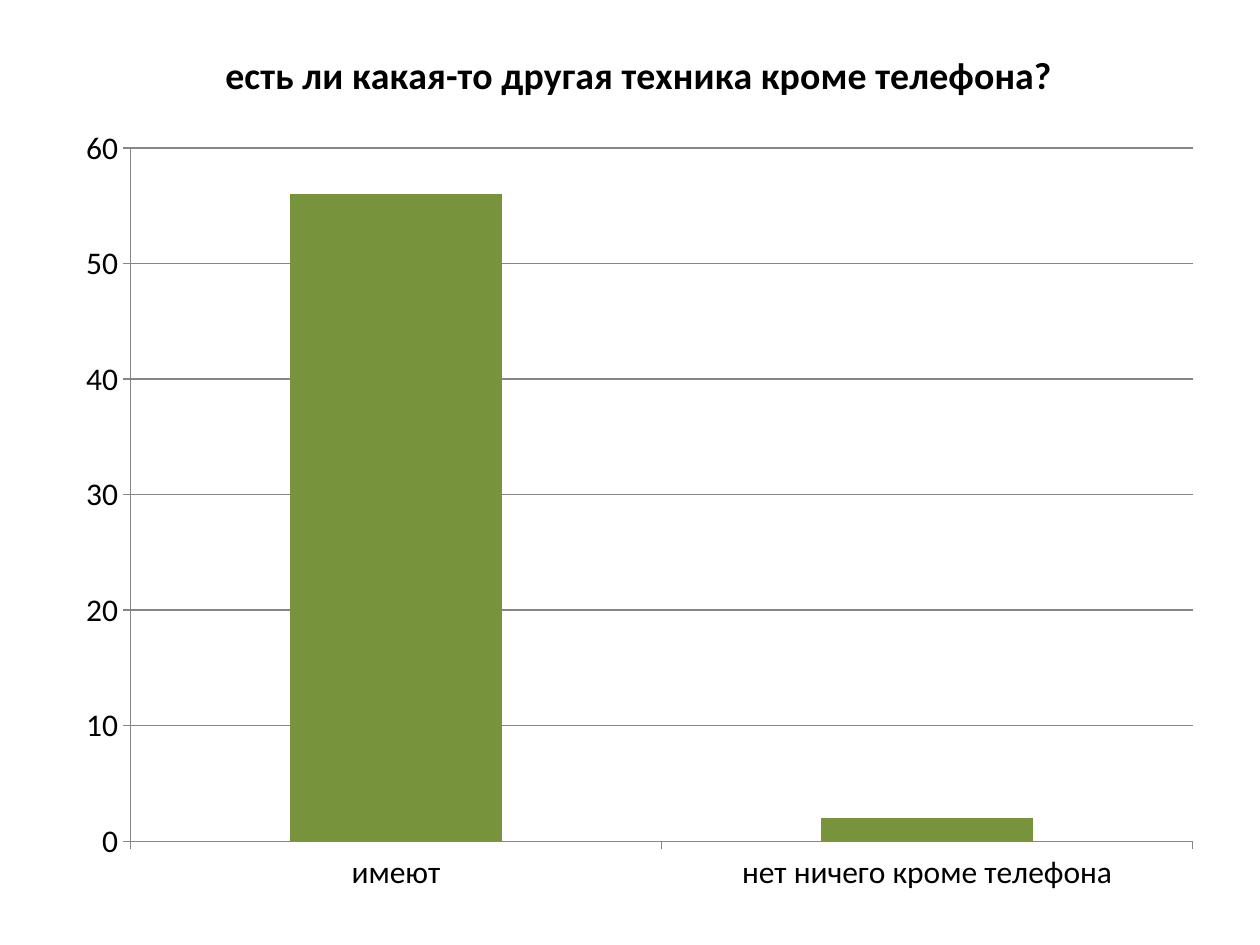
import dataclasses

import pptx
import pptx.chart.data
import pptx.dml.color
import pptx.enum.chart
import pptx.util

Inches = pptx.util.Inches
Pt = pptx.util.Pt
FONT = "Calibri"
BLACK, GRAY, GREEN = "000000", "868686", "77933C"


@dataclasses.dataclass
class Answer:
    label: str
    count: int


TITLE = "есть ли какая-то другая техника кроме телефона?"
ANSWERS = [Answer("имеют", 56), Answer("нет ничего кроме телефона", 2)]


def color(code: str) -> pptx.dml.color.RGBColor:
    return pptx.dml.color.RGBColor.from_string(code)


def style_font(font, size: float, bold: bool = False) -> None:
    font.name = FONT
    font.size = Pt(size)
    font.bold = bold
    font.color.rgb = color(BLACK)


def style_line(line) -> None:
    line.color.rgb = color(GRAY)
    line.width = Pt(0.75)


def style_axis(axis, grid: bool) -> None:
    axis.major_tick_mark = pptx.enum.chart.XL_TICK_MARK.OUTSIDE
    axis.minor_tick_mark = pptx.enum.chart.XL_TICK_MARK.NONE
    axis.has_major_gridlines = grid
    style_line(axis.format.line)
    style_font(axis.tick_labels.font, 18)
    if grid:
        style_line(axis.major_gridlines.format.line)


def add_survey(slide) -> None:
    data = pptx.chart.data.CategoryChartData()
    data.categories = [answer.label for answer in ANSWERS]
    data.add_series(TITLE, [answer.count for answer in ANSWERS])
    chart = slide.shapes.add_chart(
        pptx.enum.chart.XL_CHART_TYPE.COLUMN_STACKED,
        Inches(0.5), Inches(0.13), Inches(9.15), Inches(7.09), data).chart
    style_font(chart.font, 18)
    chart.has_legend = False

    # Title
    chart.has_title = True
    frame = chart.chart_title.text_frame
    frame.text = TITLE
    style_font(frame.paragraphs[0].runs[0].font, 21.6, bold=True)
    chart.chart_title.include_in_layout = False

    # Axes
    style_axis(chart.category_axis, grid=False)
    style_axis(chart.value_axis, grid=True)
    chart.value_axis.minimum_scale = 0
    chart.value_axis.maximum_scale = 60
    chart.value_axis.major_unit = 10

    # Columns
    plot = chart.plots[0]
    plot.gap_width = 150
    plot.overlap = 100
    plot.vary_by_categories = False
    fill = plot.series[0].format.fill
    fill.solid()
    fill.fore_color.rgb = color(GREEN)


def main() -> None:
    deck = pptx.Presentation()
    deck.slide_width = Inches(10)
    deck.slide_height = Inches(7.5)
    add_survey(deck.slides.add_slide(deck.slide_layouts[6]))
    deck.save("out.pptx")


if __name__ == "__main__":
    main()
